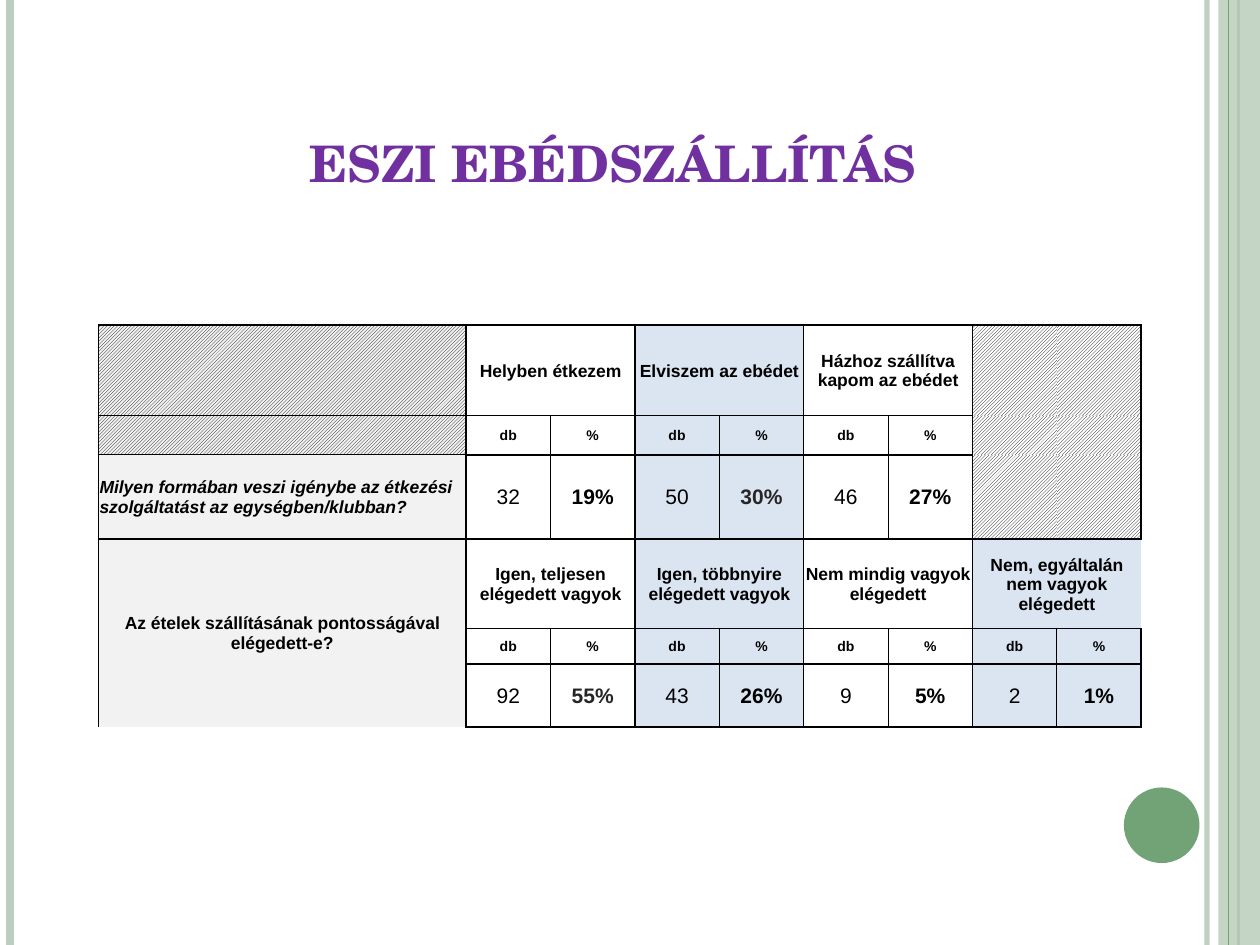
from dataclasses import dataclass
from typing import Optional

from pptx import Presentation
from pptx.dml.color import RGBColor
from pptx.enum.dml import MSO_PATTERN
from pptx.enum.shapes import MSO_CONNECTOR, MSO_SHAPE
from pptx.enum.text import MSO_ANCHOR, PP_ALIGN
from pptx.oxml.ns import qn
from pptx.util import Inches, Pt
from lxml import etree

HATCH = MSO_PATTERN.LIGHT_UPWARD_DIAGONAL
STRAIGHT = MSO_CONNECTOR.STRAIGHT
RECTANGLE, OVAL = MSO_SHAPE.RECTANGLE, MSO_SHAPE.OVAL
CENTER, LEFT = PP_ALIGN.CENTER, PP_ALIGN.LEFT
MIDDLE, BOTTOM = MSO_ANCHOR.MIDDLE, MSO_ANCHOR.BOTTOM

WIDTH, HEIGHT = 10, 7.5


@dataclass(frozen=True)
class Theme:
    title_font: str = "TeX Gyre Schola"
    body_font: str = "Arial"
    purple: str = "7030A0"
    green: str = "72A376"
    pale_green: str = "BCCEBD"
    black: str = "000000"
    charcoal: str = "262626"
    white: str = "FFFFFF"
    blue: str = "DBE5F1"
    grey: str = "F2F2F2"
    title_size: float = 28.8
    label_size: float = 10
    unit_size: float = 8
    figure_size: float = 12


THEME = Theme()


@dataclass(frozen=True)
class Stripe:
    x: float  # share of the slide's width
    color: str
    weight: float
    opacity: int = 100


@dataclass(frozen=True)
class Block:
    row: int
    column: int
    text: str = ""
    rows: int = 1
    columns: int = 1
    fill: str = THEME.white
    hatched: bool = False
    size: float = THEME.label_size
    bold: bool = True
    italic: bool = False
    color: str = THEME.black
    align: PP_ALIGN = CENTER


@dataclass(frozen=True)
class Answer:
    label: str
    count: str
    percent: str
    percent_color: str = THEME.black


STRIPES = [
    Stripe(0.958, THEME.pale_green, 3, 93),
    Stripe(0.008, THEME.pale_green, 4.5),
    Stripe(0.983, THEME.green, 1.5),
    Stripe(0.975, THEME.green, 0.75),
]

# Table grid: one question column, then four pairs of count and percent
COLUMNS = [2.92] + [0.67] * 8
ROWS = [0.72, 0.31, 0.67, 0.71, 0.28, 0.5]
VERTICAL_RULES = [1] + [1, 0.5] * 4 + [1]
HORIZONTAL_RULES = [1, 0.5, 1, 1, 0.5, 1, 1]
QUESTION_RULES = [1, 0.5, 0.5, 1, 0.5, 1, 1]

MEAL_ANSWERS = [
    Answer("Helyben étkezem", "32", "19%"),
    Answer("Elviszem az ebédet", "50", "30%", THEME.charcoal),
    Answer("Házhoz szállítva kapom az ebédet", "46", "27%"),
]
DELIVERY_ANSWERS = [
    Answer("Igen, teljesen elégedett vagyok", "92", "55%", THEME.charcoal),
    Answer("Igen, többnyire elégedett vagyok", "43", "26%"),
    Answer("Nem mindig vagyok elégedett", "9", "5%"),
    Answer("Nem, egyáltalán nem vagyok elégedett", "2", "1%"),
]
SIDE_BLOCKS = [
    Block(0, 0, fill=THEME.grey, hatched=True),
    Block(1, 0, fill=THEME.grey, hatched=True),
    Block(0, 7, rows=3, columns=2, hatched=True),
    Block(2, 0, "Milyen formában veszi igénybe az étkezési "
          "szolgáltatást az egységben/klubban?",
          fill=THEME.grey, italic=True, align=LEFT),
    Block(3, 0, "Az ételek szállításának pontosságával elégedett-e?",
          rows=3, fill=THEME.grey),
]


def rgb(color: str) -> RGBColor:
    return RGBColor.from_string(color)


def set_opacity(fill_parent, percent: int) -> None:
    color = next(fill_parent.iter(qn("a:srgbClr")))
    etree.SubElement(color, qn("a:alpha"), val=str(percent * 1000))


def draw_stripe(page, stripe: Stripe) -> None:
    x = Inches(stripe.x * WIDTH)
    line = page.shapes.add_connector(STRAIGHT, x, 0, x, Inches(HEIGHT))
    line.line.color.rgb = rgb(stripe.color)
    line.line.width = Pt(stripe.weight)
    properties = line._element.spPr
    etree.SubElement(properties, qn("a:effectLst"))
    if stripe.opacity < 100:
        set_opacity(properties, stripe.opacity)


def draw_shape(page, kind, left: float, top: float, width: float,
               height: float, color: str):
    shape = page.shapes.add_shape(
        kind, Inches(left), Inches(top), Inches(width), Inches(height))
    shape.shadow.inherit = False
    shape.fill.solid()
    shape.fill.fore_color.rgb = rgb(color)
    shape.line.fill.background()
    return shape


def draw_title(page, text: str) -> None:
    box = page.shapes.add_textbox(
        Inches(0.78), Inches(1.02), Inches(8.17), Inches(0.56))
    frame = box.text_frame
    frame.word_wrap = True
    frame.vertical_anchor = BOTTOM
    para = frame.paragraphs[0]
    para.text = text
    para.alignment = CENTER
    para.font.name, para.font.size = THEME.title_font, Pt(THEME.title_size)
    para.font.bold = True
    para.font.color.rgb = rgb(THEME.purple)


def set_border(cell, side: str, weight: Optional[float]) -> None:
    width = str(Pt(weight or 0))
    line = etree.SubElement(cell._tc.get_or_add_tcPr(), qn(f"a:ln{side}"), w=width)
    if weight is None:
        etree.SubElement(line, qn("a:noFill"))
        return
    fill = etree.SubElement(line, qn("a:solidFill"))
    etree.SubElement(fill, qn("a:srgbClr"), val=THEME.black)


def style_cell(cell, block: Block, row: int, column: int) -> None:
    """Rule the block's outer edges only, then fill the cell."""
    rules = HORIZONTAL_RULES if column else QUESTION_RULES
    last_row = block.row + block.rows - 1
    last_column = block.column + block.columns - 1
    edges = {
        "L": (column == block.column, VERTICAL_RULES[column]),
        "R": (column == last_column, VERTICAL_RULES[column + 1]),
        "T": (row == block.row, rules[row]),
        "B": (row == last_row, rules[row + 1]),
    }
    for side, (outer, weight) in edges.items():
        set_border(cell, side, weight if outer else None)
    if block.hatched:
        cell.fill.patterned()
        cell.fill.pattern = HATCH
        cell.fill.fore_color.rgb = rgb(THEME.black)
        cell.fill.back_color.rgb = rgb(block.fill)
    else:
        cell.fill.solid()
        cell.fill.fore_color.rgb = rgb(block.fill)
    cell.margin_left = cell.margin_right = cell.margin_top = Inches(0.01)
    cell.margin_bottom = 0
    cell.vertical_anchor = MIDDLE


def draw_block(table, block: Block) -> None:
    for row in range(block.row, block.row + block.rows):
        for column in range(block.column, block.column + block.columns):
            style_cell(table.cell(row, column), block, row, column)
    if not block.text:
        return
    cell = table.cell(block.row, block.column)
    if block.rows * block.columns > 1:
        cell.merge(table.cell(block.row + block.rows - 1,
                              block.column + block.columns - 1))
    para = cell.text_frame.paragraphs[0]
    para.text = block.text
    para.alignment = block.align
    para.font.name, para.font.size = THEME.body_font, Pt(block.size)
    para.font.bold, para.font.italic = block.bold, block.italic
    para.font.color.rgb = rgb(block.color)


def answer_blocks(first_row: int, answers: list[Answer]) -> list[Block]:
    blocks = []
    for index, answer in enumerate(answers):
        column = 1 + 2 * index
        fill = THEME.blue if index % 2 else THEME.white
        unit, figure = THEME.unit_size, THEME.figure_size
        blocks += [
            Block(first_row, column, answer.label, columns=2, fill=fill),
            Block(first_row + 1, column, "db", fill=fill, size=unit),
            Block(first_row + 1, column + 1, "%", fill=fill, size=unit),
            Block(first_row + 2, column, answer.count, fill=fill,
                  size=figure, bold=False),
            Block(first_row + 2, column + 1, answer.percent, fill=fill,
                  size=figure, color=answer.percent_color),
        ]
    return blocks


def draw_table(page) -> None:
    table = page.shapes.add_table(
        len(ROWS), len(COLUMNS), Inches(0.78), Inches(2.58),
        Inches(sum(COLUMNS)), Inches(sum(ROWS))).table
    table.first_row = table.horz_banding = False
    for column, width in zip(table.columns, COLUMNS):
        column.width = Inches(width)
    for row, height in zip(table.rows, ROWS):
        row.height = Inches(height)
    for block in (SIDE_BLOCKS + answer_blocks(0, MEAL_ANSWERS)
                  + answer_blocks(3, DELIVERY_ANSWERS)):
        draw_block(table, block)


def main() -> None:
    deck = Presentation()
    deck.slide_width, deck.slide_height = Inches(WIDTH), Inches(HEIGHT)
    page = deck.slides.add_slide(deck.slide_layouts[6])

    # Side decoration
    for stripe in STRIPES[:3]:
        draw_stripe(page, stripe)
    band = draw_shape(page, RECTANGLE, 9.67, 0, 0.33, HEIGHT, THEME.pale_green)
    set_opacity(band._element.spPr, 87)
    draw_stripe(page, STRIPES[3])
    draw_shape(page, OVAL, 8.92, 6.25, 0.6, 0.6, THEME.green)

    # Title and survey table
    draw_title(page, "ESZI EBÉDSZÁLLÍTÁS")
    draw_table(page)
    deck.save("out.pptx")


if __name__ == "__main__":
    main()
